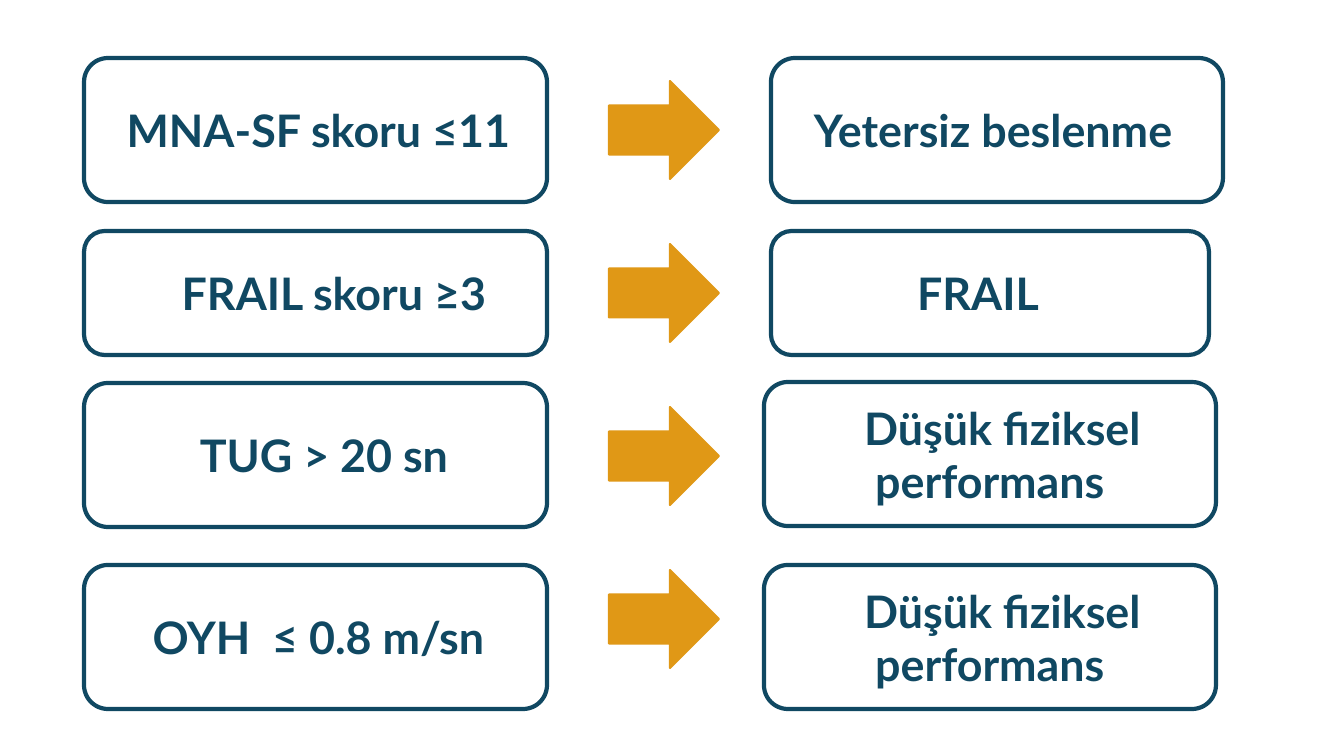
"""Build a slide that maps four screening thresholds to their clinical meaning."""
from pptx import Presentation
from pptx.dml.color import RGBColor
from pptx.enum.shapes import MSO_SHAPE
from pptx.enum.text import MSO_ANCHOR, PP_ALIGN
from pptx.util import Emu, Pt

NAVY = RGBColor(0x10, 0x48, 0x62)
ORANGE = RGBColor(0xE0, 0x98, 0x16)
WHITE = RGBColor(0xFF, 0xFF, 0xFF)
CENTER, LEFT = PP_ALIGN.CENTER, PP_ALIGN.LEFT


def px(length):
    return Emu(round(length * 914400 / 100.8))


def add_figure(page, preset, bounds, fill, line, weight):
    figure = page.shapes.add_shape(preset, *[px(length) for length in bounds])
    figure.shadow.inherit = False
    figure.fill.solid()
    figure.fill.fore_color.rgb = fill
    figure.line.color.rgb = line
    figure.line.width = Pt(weight)
    return figure


deck = Presentation()
deck.slide_width, deck.slide_height = px(1344), px(756)
page = deck.slides.add_slide(deck.slide_layouts[6])

boxes = [
    ("MNA-SF skoru ≤11", (84, 58, 463, 144), CENTER, 16, 0),
    ("Yetersiz beslenme", (771, 58, 452, 144), LEFT, 36, 0),
    ("FRAIL skoru ≥3", (84, 231, 463, 124), CENTER, 47, 0),
    ("FRAIL", (771, 231, 438, 124), LEFT, 140, 0),
    ("TUG > 20 sn", (84, 383, 463, 144), CENTER, 27, 0),
    ("Düşük fiziksel performans", (764, 382, 452, 144), CENTER, 10, 25),
    ("OYH  ≤ 0.8 m/sn", (84, 565, 463, 144), CENTER, 16, 0),
    ("Düşük fiziksel performans", (764, 565, 452, 144), CENTER, 10, 25),
]
for text, bounds, alignment, inset, indent in boxes:
    box = add_figure(page, MSO_SHAPE.ROUNDED_RECTANGLE, bounds, WHITE, NAVY, 3)
    frame = box.text_frame
    frame.word_wrap = True
    frame.vertical_anchor = MSO_ANCHOR.MIDDLE
    frame.margin_left = px(inset)
    para = frame.paragraphs[0]
    para.text = text
    para.alignment = alignment
    para.font.name = "Lato"
    para.font.size = Pt(32)
    para.font.bold = True
    para.font.color.rgb = NAVY
    if indent:
        para._p.get_or_add_pPr().set("indent", str(px(indent)))

for row in range(4):
    bounds = (609, 81 + 163 * row, 110, 98)
    add_figure(page, MSO_SHAPE.RIGHT_ARROW, bounds, ORANGE, ORANGE, 1.5)

deck.save("out.pptx")
